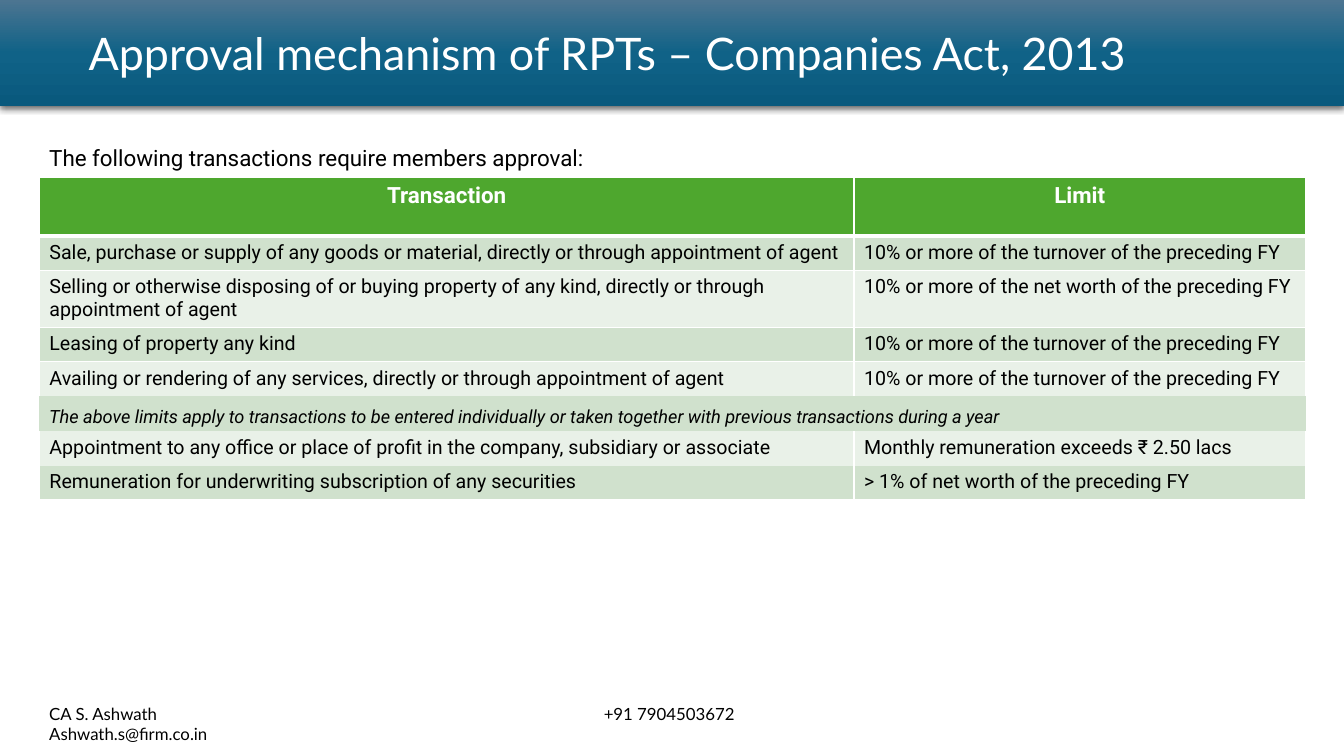
from lxml.etree import SubElement
from pptx import Presentation
from pptx.dml.color import RGBColor
from pptx.enum.shapes import MSO_SHAPE
from pptx.enum.text import MSO_ANCHOR, PP_ALIGN
from pptx.oxml import parse_xml
from pptx.oxml.ns import nsdecls, qn
from pptx.util import Inches, Pt

WHITE, BLACK, GREEN = "FFFFFF", "000000", "4EA72E"
BANDS = ("D0E1CD", "E9F1E8")
LEFT, WIDTH = 0.39, 12.56
COLUMN_WIDTHS = (8.08, 4.48)
ROW_HEIGHTS = (0.58, 0.34, 0.57, 0.34, 0.34, 0.35, 0.34, 0.34)
NOTE_ROW = 5
TURNOVER_LIMIT = "10% or more of the turnover of the preceding FY"
ROWS = (
    ("Transaction", "Limit"),
    ("Sale, purchase or supply of any goods or material, directly or through appointment of agent",
     TURNOVER_LIMIT),
    ("Selling or otherwise disposing of or buying property of any kind, directly or through "
     "appointment of agent", "10% or more of the net worth of the preceding FY"),
    ("Leasing of property any kind", TURNOVER_LIMIT),
    ("Availing or rendering of any services, directly or through appointment of agent",
     TURNOVER_LIMIT),
    ("", ""),
    ("Appointment to any office or place of profit in the company, subsidiary or associate",
     "Monthly remuneration exceeds ₹ 2.50 lacs"),
    ("Remuneration for underwriting subscription of any securities",
     "> 1% of net worth of the preceding FY"),
)


def color(value):
    return RGBColor.from_string(value)


def style(paragraph, size, name="Roboto", fill=BLACK, bold=False, italic=False):
    font = paragraph.font
    font.size, font.name, font.bold, font.italic = Pt(size), name, bold, italic
    font.color.rgb = color(fill)


def add_text(slide, top, height, lines, size, name="Roboto", italic=False):
    box = slide.shapes.add_textbox(Inches(LEFT), Inches(top), Inches(WIDTH), Inches(height))
    frame = box.text_frame
    frame.word_wrap = True
    frame.text = "\n".join(lines)
    for paragraph in frame.paragraphs:
        style(paragraph, size, name, italic=italic)
    return frame


def add_tab_stop(paragraph, position):
    properties = paragraph._p.get_or_add_pPr()
    tabs = parse_xml(f'<a:tabLst {nsdecls("a")}>'
                     f'<a:tab pos="{Inches(position)}" algn="l"/></a:tabLst>')
    properties.insert_element_before(tabs, "a:defRPr", "a:extLst")


def add_banner(slide, width, title):
    banner = slide.shapes.add_shape(MSO_SHAPE.RECTANGLE, 0, 0, width, Inches(1.05))
    banner.line.fill.background()
    properties = banner._element.spPr
    stops = "".join(f'<a:gs pos="{position}"><a:srgbClr val="{value}"/></a:gs>'
                    for position, value in ((0, "4C7591"), (50000, "106287"), (100000, "09597D")))
    gradient = parse_xml(f'<a:gradFill {nsdecls("a")} rotWithShape="1"><a:gsLst>{stops}</a:gsLst>'
                         '<a:lin ang="5400000" scaled="0"/></a:gradFill>')
    properties.find(qn("a:ln")).addprevious(gradient)
    properties.append(parse_xml(
        f'<a:effectLst {nsdecls("a")}><a:outerShdw blurRad="{Pt(4.5)}" dist="{Pt(1.5)}" '
        'dir="5400000" algn="ctr" rotWithShape="0"><a:srgbClr val="000000">'
        '<a:alpha val="63000"/></a:srgbClr></a:outerShdw></a:effectLst>'))
    frame = banner.text_frame
    frame.word_wrap = True
    frame.vertical_anchor = MSO_ANCHOR.MIDDLE
    paragraph = frame.paragraphs[0]
    paragraph.text = title
    paragraph.alignment = PP_ALIGN.JUSTIFY
    paragraph._p.get_or_add_pPr().set("marL", str(Inches(0.78)))
    style(paragraph, 32, "Lato", WHITE)


def set_borders(cell, left, right, top, bottom):
    """Draw white borders of the given widths in points; zero means none."""
    properties = cell._tc.get_or_add_tcPr()
    for side, width in zip("LRTB", (left, right, top, bottom)):
        line = SubElement(properties, qn(f"a:ln{side}"), w=str(Pt(width)))
        if width:
            SubElement(SubElement(line, qn("a:solidFill")), qn("a:srgbClr"), val=WHITE)
        else:
            SubElement(line, qn("a:noFill"))


def add_limits_table(slide):
    table = slide.shapes.add_table(len(ROWS), len(COLUMN_WIDTHS), Inches(LEFT), Inches(1.76),
                                   Inches(WIDTH), Inches(sum(ROW_HEIGHTS))).table
    for column, width in zip(table.columns, COLUMN_WIDTHS):
        column.width = Inches(width)
    for index, (row, height, texts) in enumerate(zip(table.rows, ROW_HEIGHTS, ROWS)):
        row.height = Inches(height)
        header = index == 0
        side = 0 if index == NOTE_ROW else 1
        top = 1 if index < NOTE_ROW else 0
        bottom = 3 if header else int(index < NOTE_ROW - 1 or index == len(ROWS) - 1)
        for cell, text in zip(row.cells, texts):
            set_borders(cell, side, side, top, bottom)
            cell.fill.solid()
            cell.fill.fore_color.rgb = color(GREEN if header else BANDS[(index - 1) % 2])
            paragraph = cell.text_frame.paragraphs[0]
            paragraph.text = text
            if header:
                paragraph.alignment = PP_ALIGN.CENTER
                style(paragraph, 16, fill=WHITE, bold=True)
            else:
                style(paragraph, 14)


def main():
    presentation = Presentation()
    presentation.slide_width, presentation.slide_height = Inches(13.33), Inches(7.5)
    slide = presentation.slides.add_slide(presentation.slide_layouts[6])
    add_banner(slide, presentation.slide_width, "Approval mechanism of RPTs – Companies Act, 2013")
    footer = add_text(slide, 6.93, 0.5, ("CA S. Ashwath\t+91 7904503672", "Ashwath.s@firm.co.in"),
                      12, "Lato")
    add_tab_stop(footer.paragraphs[0], 5.5)
    add_text(slide, 1.38, 0.37, ("The following transactions require members approval:",), 16)
    add_limits_table(slide)
    add_text(slide, 3.97, 0.32,
             ("The above limits apply to transactions to be entered individually or taken together "
              "with previous transactions during a year",), 13, italic=True)
    presentation.save("out.pptx")


if __name__ == "__main__":
    main()
